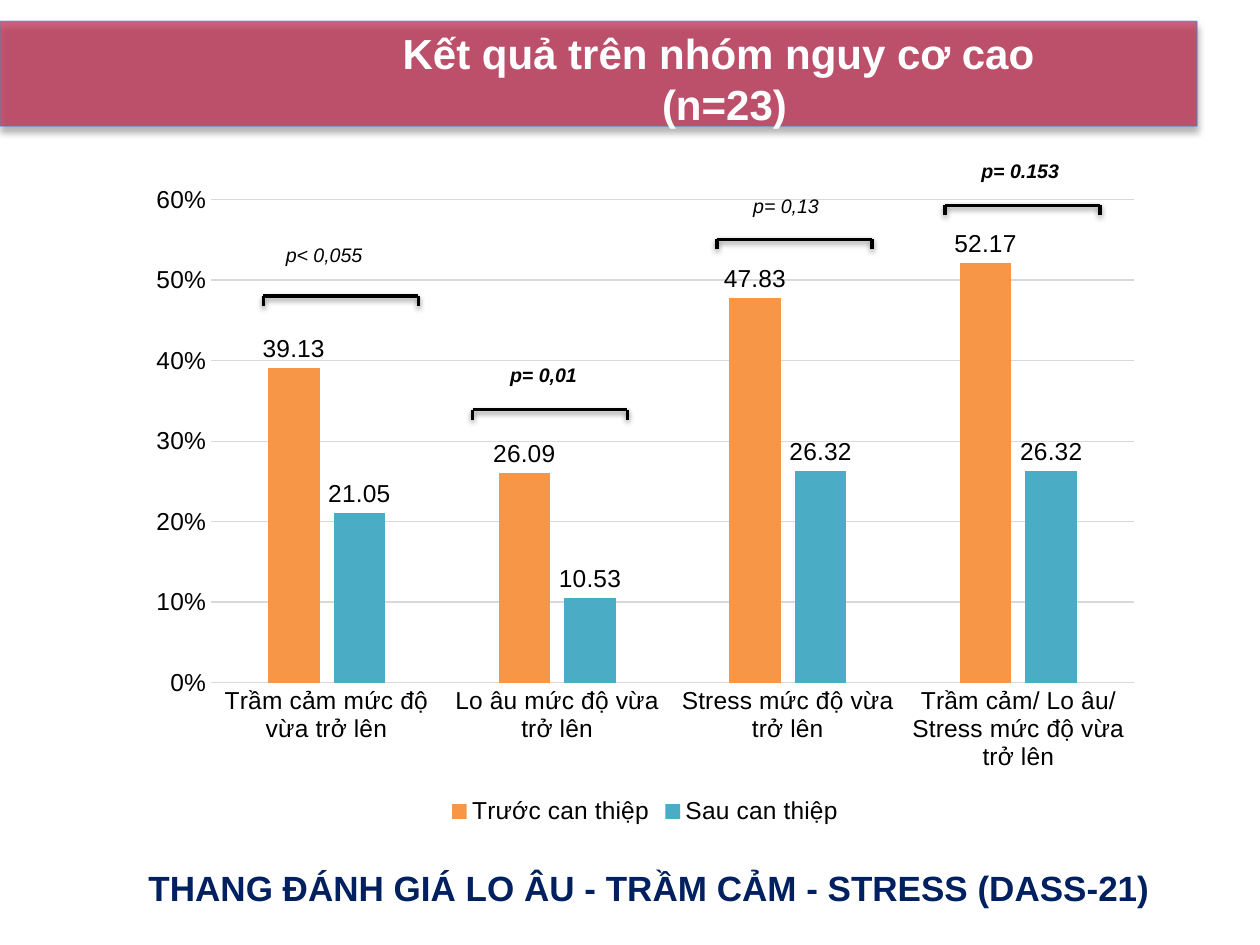
from lxml import etree
from pptx import Presentation
from pptx.chart.data import CategoryChartData
from pptx.dml.color import RGBColor
from pptx.enum.chart import XL_CHART_TYPE, XL_LABEL_POSITION, XL_LEGEND_POSITION, XL_TICK_MARK
from pptx.enum.shapes import MSO_CONNECTOR, MSO_SHAPE
from pptx.enum.text import MSO_ANCHOR, PP_ALIGN
from pptx.oxml.ns import qn
from pptx.util import Inches, Pt

COLUMNS = XL_CHART_TYPE.COLUMN_CLUSTERED
OUTSIDE_END = XL_LABEL_POSITION.OUTSIDE_END
LEGEND_BOTTOM = XL_LEGEND_POSITION.BOTTOM
NO_TICK = XL_TICK_MARK.NONE
STRAIGHT = MSO_CONNECTOR.STRAIGHT
RECTANGLE = MSO_SHAPE.RECTANGLE
MIDDLE, TOP = MSO_ANCHOR.MIDDLE, MSO_ANCHOR.TOP
CENTER, LEFT = PP_ALIGN.CENTER, PP_ALIGN.LEFT

FONT = "Arial"
BLACK, WHITE, GRID_GRAY = "000000", "FFFFFF", "D9D9D9"

CATEGORIES = [
    "Trầm cảm mức độ vừa trở lên",
    "Lo âu mức độ vừa trở lên",
    "Stress mức độ vừa trở lên",
    "Trầm cảm/ Lo âu/ Stress mức độ vừa trở lên",
]
SERIES = [
    ("Trước can thiệp", "F79646", [39.13, 26.09, 47.83, 52.17]),
    ("Sau can thiệp", "4BACC6", [21.05, 10.53, 26.32, 26.32]),
]
# Bracket left and top, label text, label left and top, label bold
COMPARISONS = [
    (2.09, 2.35, "p< 0,055", 2.17, 1.88, False),
    (3.75, 3.25, "p= 0,01", 3.95, 2.83, True),
    (5.69, 1.90, "p= 0,13", 5.88, 1.49, False),
    (7.50, 1.63, "p= 0.153", 7.69, 1.21, True),
]
BRACKET_WIDTH, BRACKET_DROP = 1.23, 0.08


def color(hex_string):
    return RGBColor.from_string(hex_string)


def set_font(font, size, hex_string=BLACK, bold=False, italic=False):
    font.name, font.size = FONT, Pt(size)
    font.bold, font.italic = bold, italic
    font.color.rgb = color(hex_string)


def set_line(line, hex_string, width):
    line.color.rgb = color(hex_string)
    line.width = Pt(width)


def set_alpha(fill, percent):
    """Make a solid colour inside the given fill element partly transparent."""
    etree.SubElement(fill.find(".//" + qn("a:srgbClr")), qn("a:alpha"), val=str(percent * 1000))


def add_shadow(shape, blur, distance, percent):
    """Give a shape a black shadow that falls straight down."""
    effects = etree.SubElement(shape._element.spPr, qn("a:effectLst"))
    shadow = etree.SubElement(
        effects, qn("a:outerShdw"), blurRad=str(Pt(blur)), dist=str(Pt(distance)),
        dir="5400000", rotWithShape="0")
    etree.SubElement(shadow, qn("a:srgbClr"), val=BLACK)
    set_alpha(shadow, percent)


def add_text(shapes, text, left, top, width, height, size, hex_string=BLACK,
             bold=False, italic=False, align=LEFT, anchor=TOP, wrap=False):
    box = shapes.add_textbox(Inches(left), Inches(top), Inches(width), Inches(height))
    frame = box.text_frame
    frame.word_wrap = wrap
    frame.vertical_anchor = anchor
    paragraph = frame.paragraphs[0]
    paragraph.text = text
    paragraph.alignment = align
    for run in paragraph.runs:
        set_font(run.font, size, hex_string, bold, italic)


def add_banner(slide):
    banner = slide.shapes.add_shape(RECTANGLE, 0, Inches(0.17), Inches(9.5), Inches(0.83))
    banner.fill.solid()
    banner.fill.fore_color.rgb = color("C02F52")
    set_line(banner.line, "4B7EBC", 0.75)
    properties = banner._element.spPr
    set_alpha(properties.find(qn("a:solidFill")), 75)
    set_alpha(properties.find(qn("a:ln")), 70)
    add_shadow(banner, 4, 3, 40)


def add_score_chart(slide):
    data = CategoryChartData()
    data.categories = CATEGORIES
    for name, _, values in SERIES:
        data.add_series(name, values)
    chart = slide.shapes.add_chart(
        COLUMNS, Inches(1.08), Inches(1.37), Inches(8.08), Inches(5.22), data).chart
    set_font(chart.font, 14)
    chart.has_title = False
    chart.has_legend = True
    chart.legend.position = LEGEND_BOTTOM
    chart.legend.include_in_layout = False
    set_font(chart.legend.font, 14)

    for axis in (chart.category_axis, chart.value_axis):
        axis.major_tick_mark = axis.minor_tick_mark = NO_TICK
        set_font(axis.tick_labels.font, 14)
    set_line(chart.category_axis.format.line, GRID_GRAY, 0.75)
    value_axis = chart.value_axis
    value_axis.minimum_scale, value_axis.maximum_scale, value_axis.major_unit = 0, 60, 10
    value_axis.format.line.fill.background()
    set_line(value_axis.major_gridlines.format.line, GRID_GRAY, 0.75)
    value_axis.tick_labels.number_format = '#,##0"%"'
    value_axis.tick_labels.number_format_is_linked = False

    plot = chart.plots[0]
    plot.gap_width, plot.overlap = 219, -27
    plot.vary_by_categories = False
    for series, (_, fill, _) in zip(plot.series, SERIES):
        series.format.fill.solid()
        series.format.fill.fore_color.rgb = color(fill)
        series.invert_if_negative = False
        labels = series.data_labels
        labels.show_value = True
        labels.position = OUTSIDE_END
        set_font(labels.font, 14)


def add_line(shapes, *ends):
    connector = shapes.add_connector(STRAIGHT, *map(Inches, ends))
    set_line(connector.line, BLACK, 2)
    add_shadow(connector, 3.1, 1.6, 38)


def add_comparison(slide, left, top, text, text_left, text_top, bold):
    """Add a bracket over a pair of columns, with its p-value."""
    shapes = slide.shapes.add_group_shape().shapes
    right, bottom = left + BRACKET_WIDTH, top + BRACKET_DROP
    add_text(shapes, text, text_left, text_top, 0.9, 0.3, 11.2, bold=bold, italic=True)
    add_line(shapes, left, top, right, top)
    for x in (right, left):
        add_line(shapes, x, top, x, bottom)


def main():
    presentation = Presentation()
    presentation.slide_width, presentation.slide_height = Inches(10), Inches(7.5)
    slide = presentation.slides.add_slide(presentation.slide_layouts[6])
    add_banner(slide)
    add_score_chart(slide)
    for comparison in COMPARISONS:
        add_comparison(slide, *comparison)
    add_text(slide.shapes, "Kết quả trên nhóm nguy cơ cao \v(n=23)", 2, 0.17, 7.5, 0.9, 24,
             WHITE, bold=True, align=CENTER, anchor=MIDDLE, wrap=True)
    add_text(slide.shapes, "THANG ĐÁNH GIÁ LO ÂU - TRẦM CẢM - STRESS (DASS-21)",
             1.08, 6.83, 8.22, 0.44, 20, "002060", bold=True)
    presentation.save("out.pptx")


if __name__ == "__main__":
    main()
